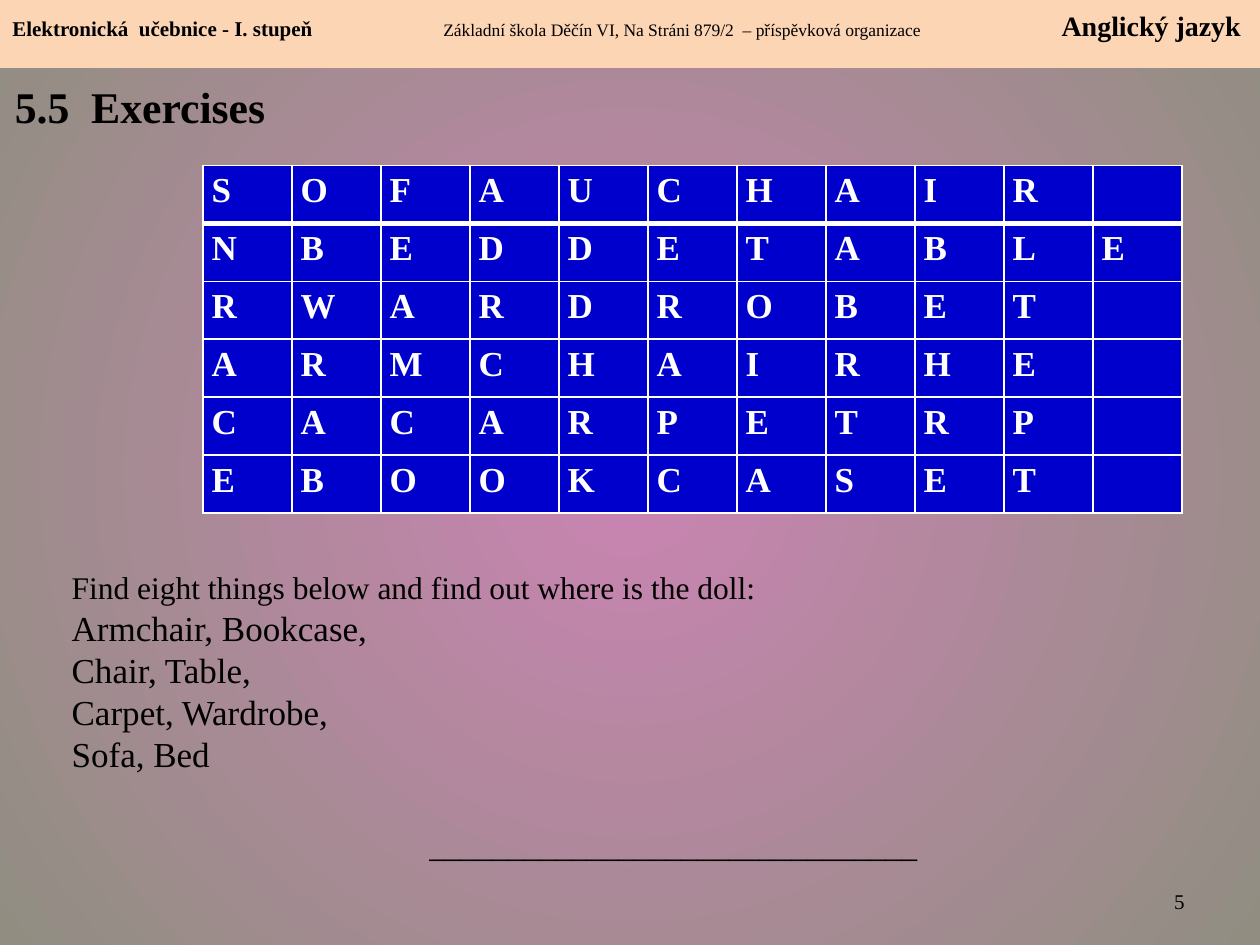
import lxml.etree
import pptx
import pptx.dml.color
import pptx.enum.shapes
import pptx.enum.text
import pptx.oxml.ns
import pptx.util

COLORS = {"glow": "CA84B3", "edge": "918E81", "band": "FCD5B5",
          "cell": "0000CC", "grid": "FFFFFF", "ink": "000000"}
FONT = "Times New Roman"
WIDTH, HEIGHT = pptx.util.Inches(10), pptx.util.Inches(7.5)
LETTERS = ["SOFAUCHAIR", "NBEDDETABLE", "RWARDROBET",
           "ARMCHAIRHE", "CACARPETRP", "EBOOKCASET"]
WORDS = ["Find eight things below and find out where is the doll:",
         "Armchair, Bookcase,", "Chair, Table,", "Carpet, Wardrobe,", "Sofa, Bed"]


def rgb(name):
    """Return the named palette colour."""
    return pptx.dml.color.RGBColor.from_string(COLORS[name])


def add_xml(parent, tag, **attributes):
    """Append a DrawingML element to its parent."""
    return lxml.etree.SubElement(parent, pptx.oxml.ns.qn(tag), attributes)


def place(left, top, width, height):
    """Turn shares of the slide into a box of lengths."""
    return (round(left * WIDTH), round(top * HEIGHT),
            round(width * WIDTH), round(height * HEIGHT))


def style(run, size, bold=False, color="ink"):
    """Format one run of text."""
    run.font.name, run.font.size, run.font.bold = FONT, pptx.util.Pt(size), bold
    run.font.color.rgb = rgb(color)


def paint_background(slide):
    """Fill the background with a glow from its centre."""
    fill = slide.background.fill
    fill.gradient()
    for stop, name in zip(fill.gradient_stops, ("glow", "edge")):
        stop.color.rgb = rgb(name)
    gradient = slide.element.find(".//" + pptx.oxml.ns.qn("a:gradFill"))
    gradient.remove(gradient.find(pptx.oxml.ns.qn("a:lin")))
    circle = add_xml(gradient, "a:path", path="circle")
    add_xml(circle, "a:fillToRect", l="50000", t="50000", r="50000", b="50000")


def add_header(slide, box):
    """Draw the band with school level, school and subject."""
    band = slide.shapes.add_shape(pptx.enum.shapes.MSO_SHAPE.RECTANGLE, *box)
    band.shadow.inherit = False
    band.fill.solid()
    band.fill.fore_color.rgb = rgb("band")
    band.line.fill.background()
    frame = band.text_frame
    frame.vertical_anchor = pptx.enum.text.MSO_ANCHOR.TOP
    frame.margin_top = pptx.util.Inches(0.07)
    line = frame.paragraphs[0]
    line.alignment = pptx.enum.text.PP_ALIGN.LEFT
    tabs = add_xml(line._p.get_or_add_pPr(), "a:tabLst")
    for share, side in ((0.342, "l"), (0.975, "r")):
        add_xml(tabs, "a:tab", pos=str(round(share * box[2])), algn=side)
    for text, size, bold in (
            ("Elektronická  učebnice - I. stupeň", 12, True),
            ("\tZákladní škola Děčín VI, Na Stráni 879/2  – příspěvková organizace", 10, False),
            ("\tAnglický jazyk", 16, True)):
        run = line.add_run()
        run.text = text
        style(run, size, bold)


def add_text(slide, box, lines, sizes, bold=False, wrap=True, align="LEFT", anchor="TOP"):
    """Add a text box with one paragraph for each line."""
    frame = slide.shapes.add_textbox(*box).text_frame
    frame.word_wrap = wrap
    frame.vertical_anchor = pptx.enum.text.MSO_ANCHOR[anchor]
    frame.text = "\n".join(lines)
    for paragraph, size in zip(frame.paragraphs, sizes):
        paragraph.alignment = pptx.enum.text.PP_ALIGN[align]
        style(paragraph.runs[0], size, bold)


def add_borders(cell, widths):
    """Draw the four borders of a cell in the given point widths."""
    properties = cell._tc.get_or_add_tcPr()
    for side, width in widths.items():
        border = add_xml(properties, "a:ln" + side, w=str(pptx.util.Pt(width)))
        add_xml(add_xml(border, "a:solidFill"), "a:srgbClr", val=COLORS["grid"])


def add_puzzle(slide, box, words):
    """Fill a table with one letter a cell."""
    columns = max(map(len, words))
    table = slide.shapes.add_table(len(words), columns, *box).table
    for column in table.columns:
        column.width = box[2] // columns
    for row_number, word in enumerate(words):
        table.rows[row_number].height = box[3] // len(words)
        for column_number, letter in enumerate(word.ljust(columns)):
            cell = table.cell(row_number, column_number)
            add_borders(cell, {"L": 1, "R": 1, "T": 3 if row_number == 1 else 1,
                               "B": 3 if row_number == 0 else 1})
            cell.fill.solid()
            cell.fill.fore_color.rgb = rgb("cell")
            cell.margin_left = cell.margin_right = pptx.util.Inches(0.07)
            cell.margin_top = cell.margin_bottom = 0
            if letter.strip():
                cell.text_frame.text = letter
                paragraph = cell.text_frame.paragraphs[0]
                paragraph.line_spacing = 1.15
                style(paragraph.runs[0], 20, True, "grid")


def main():
    """Build the exercise slide."""
    deck = pptx.Presentation()
    deck.slide_width, deck.slide_height = WIDTH, HEIGHT
    slide = deck.slides.add_slide(deck.slide_layouts[6])
    paint_background(slide)
    add_text(slide, place(0.002, 0.078, 0.7, 0.073), ["5.5  Exercises"], [25], bold=True)
    add_text(slide, place(0.717, 0.927, 0.233, 0.053), ["5"], [12],
             align="RIGHT", anchor="MIDDLE")
    add_header(slide, place(0, 0, 1, 0.072))
    add_puzzle(slide, place(0.161, 0.175, 0.777, 0.368), LETTERS)
    add_text(slide, place(0.047, 0.595, 0.569, 0.233), WORDS, [18] + [20] * 4, wrap=False)
    add_text(slide, place(0.331, 0.868, 0.411, 0.053), ["_" * 31], [18], wrap=False)
    deck.save("out.pptx")


if __name__ == "__main__":
    main()
